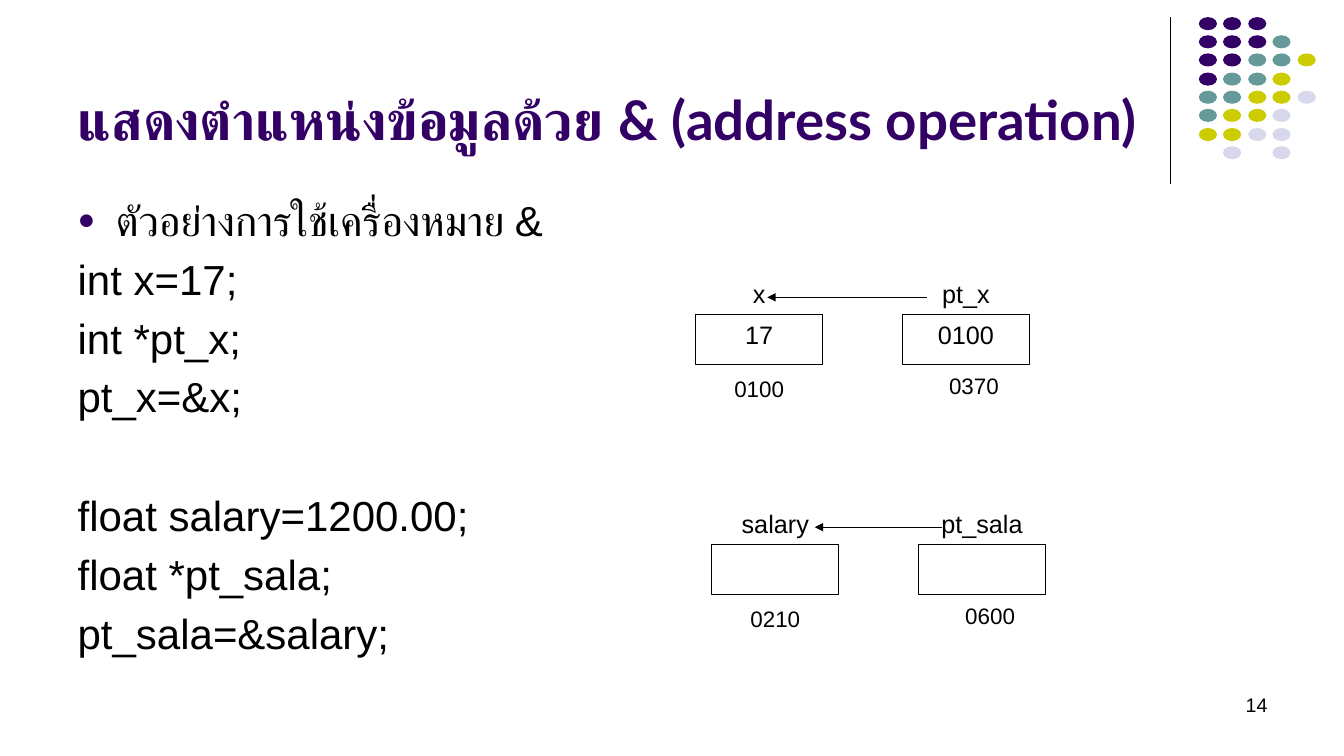
import pptx
import pptx.util
import pptx.dml.color
import pptx.enum.shapes
import pptx.enum.text
import pptx.oxml
import pptx.oxml.ns

RGB = pptx.dml.color.RGBColor
ALIGN = pptx.enum.text.PP_ALIGN
ANCHOR = pptx.enum.text.MSO_ANCHOR
SHAPE = pptx.enum.shapes.MSO_SHAPE

PLUM = RGB(0x33, 0x00, 0x66)
TEAL = RGB(0x66, 0x99, 0x99)
LIME = RGB(0xCC, 0xCC, 0x00)
MIST = RGB(0xD8, 0xD8, 0xEC)
BLACK = RGB(0x00, 0x00, 0x00)

TINTS = {"P": PLUM, "T": TEAL, "L": LIME, "M": MIST}
DOTS = ["PPP", "PPPT", "PPTTL", "PTTL", "TTLLM", "TLLM", "LLMM", " M M"]

CODE = ["int x=17;", "int *pt_x;", "pt_x=&x;",
        "float salary=1200.00;", "float *pt_sala;", "pt_sala=&salary;"]


def px(n):
    """100 px to the inch."""
    return pptx.util.Emu(n * 9144)


def place(shape, box):
    shape.left, shape.top, shape.width, shape.height = map(px, box)


def write(para, text, size=18, font="Arial", color=BLACK, bold=False,
          align=ALIGN.LEFT):
    para.alignment = align
    run = para.add_run()
    run.text = text
    run.font.size = pptx.util.Pt(size)
    run.font.name = font
    run.font.color.rgb = color
    run.font.bold = bold


def node(tag, **attrs):
    item = pptx.oxml.parse_xml(
        f"<a:{tag} {pptx.oxml.ns.nsdecls('a')}/>")
    for key, value in attrs.items():
        item.set(key, value)
    return item


def label(slide, box, text, **style):
    area = slide.shapes.add_textbox(*map(px, box))
    area.text_frame.word_wrap = True
    write(area.text_frame.paragraphs[0], text, **style)


def line(slide, start, end, arrow=False):
    link = slide.shapes.add_connector(
        pptx.enum.shapes.MSO_CONNECTOR.STRAIGHT,
        *map(px, start + end))
    link.line.color.rgb = BLACK
    link.line.width = pptx.util.Pt(0.75)
    if arrow:
        link.line._get_or_add_ln().append(node("tailEnd", type="triangle"))
    link._element.spPr.append(node("effectLst"))


def dots(slide, left, top):
    for row, marks in enumerate(DOTS):
        for col, mark in enumerate(marks):
            if mark == " ":
                continue
            box = (left + col * 49 // 2, top + row * 55 // 3, 18, 13)
            dot = slide.shapes.add_shape(SHAPE.OVAL, *map(px, box))
            dot.shadow.inherit = False
            dot.fill.solid()
            dot.fill.fore_color.rgb = TINTS[mark]
            dot.line.fill.background()


def head(slide, box, text):
    title = slide.shapes.title
    place(title, box)
    frame = title.text_frame
    frame.auto_size = pptx.enum.text.MSO_AUTO_SIZE.NONE
    frame.vertical_anchor = ANCHOR.BOTTOM
    write(frame.paragraphs[0], text, size=39, font="Lato", color=PLUM,
          bold=True)


def body(slide, box, lead, code):
    area = slide.placeholders[1]
    place(area, box)
    frame = area.text_frame
    frame.auto_size = pptx.enum.text.MSO_AUTO_SIZE.NONE
    for i, text in enumerate([lead] + code):
        para = frame.paragraphs[0] if i == 0 else frame.add_paragraph()
        write(para, text, size=30)
        # The second block of code stands one line lower
        if text.startswith("float salary"):
            para.space_before = pptx.util.Pt(49)
        props = para._p.get_or_add_pPr()
        props.set("marL", str(px(38)))
        props.set("indent", str(px(-38)))
        if i:
            props.append(node("buNone"))
        else:
            tint = node("buClr")
            tint.append(node("srgbClr", val=str(PLUM)))
            props.append(tint)
            props.append(node("buSzPct", val="70000"))
            props.append(node("buChar", char="●"))


def cell(slide, box, text):
    rect = slide.shapes.add_shape(SHAPE.RECTANGLE, *map(px, box))
    rect.shadow.inherit = False
    rect.fill.background()
    rect.line.color.rgb = BLACK
    rect.line.width = pptx.util.Pt(0.75)
    if text:
        rect.text_frame.vertical_anchor = ANCHOR.TOP
        write(rect.text_frame.paragraphs[0], text, align=ALIGN.CENTER)


def memory(slide, left, top, cells, tail, tip):
    """A variable and its pointer; the arrow runs from tail to tip."""
    wide, high = 126, 50
    for i, (name, value, spot) in enumerate(cells):
        x = left + i * 205
        cell(slide, (x, top, wide, high), value)
        label(slide, (x, top - 41, wide, high), name, align=ALIGN.CENTER)
        label(slide, (x + i * 8, top + 55 - i * 3, wide, high), spot,
              size=16, align=ALIGN.CENTER)
    y = top - 17
    line(slide, (left + tail, y), (left + tip, y), arrow=True)


def main():
    deck = pptx.Presentation()
    deck.slide_width, deck.slide_height = px(1333), px(750)
    slide = deck.slides.add_slide(deck.slide_layouts[1])

    # Corner ornament
    line(slide, (1161, 17), (1161, 183))
    dots(slide, 1189, 17)

    # Title and code
    head(slide, (67, 13, 1094, 142),
         "แสดงตำแหน่งข้อมูลด้วย & (address operation)")
    body(slide, (67, 188, 1094, 482), "ตัวอย่างการใช้เครื่องหมาย &", CODE)

    # Memory diagrams
    memory(slide, 690, 312,
           [("x", "17", "0100"), ("pt_x", "0100", "0370")], 229, 71)
    memory(slide, 706, 540,
           [("salary", "", "0210"), ("pt_sala", "", "0600")], 228, 102)

    # Slide number
    label(slide, (956, 683, 311, 50), "14", size=14, align=ALIGN.RIGHT)
    deck.save("out.pptx")


if __name__ == "__main__":
    main()
